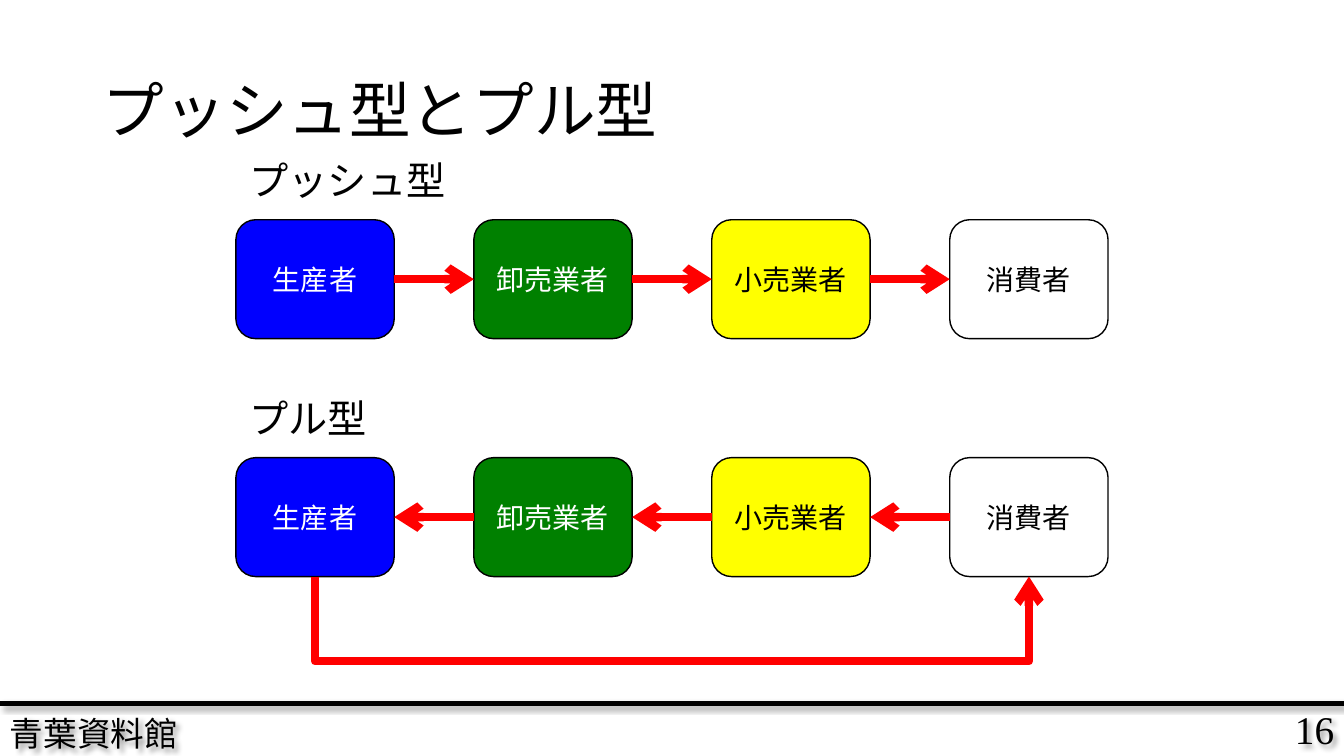
from pptx import Presentation
from pptx.dml.color import RGBColor
from pptx.enum.shapes import MSO_CONNECTOR, MSO_SHAPE
from pptx.enum.text import MSO_ANCHOR, PP_ALIGN
from pptx.oxml import parse_xml
from pptx.oxml.ns import qn
from pptx.util import Inches, Pt
from lxml.etree import SubElement

A_NS = 'xmlns:a="http://schemas.openxmlformats.org/drawingml/2006/main"'
LATIN, EAST_ASIAN = "Times New Roman", "Noto Sans CJK JP"
BLACK, WHITE, RED = "000000", "FFFFFF", "FF0000"

# Trading chain: name, fill, text colour
CHAIN = [("生産者", "0000FF", WHITE), ("卸売業者", "008000", WHITE),
         ("小売業者", "FFFF00", BLACK), ("消費者", WHITE, BLACK)]
LEFT, STEP, BOX_W, BOX_H = 2.34, 2.36, 1.57, 1.18
LABEL_H = 0.79
PUSH_TOP, PULL_TOP = 2.18, 4.54


def color(hex_string):
    return RGBColor.from_string(hex_string)


def write(shape, text, size, hex_color=BLACK, align=PP_ALIGN.LEFT, font=LATIN):
    tf = shape.text_frame
    tf.word_wrap = True
    tf.vertical_anchor = MSO_ANCHOR.MIDDLE
    p = tf.paragraphs[0]
    p.alignment = align
    r = p.add_run()
    r.text = text
    r.font.size = Pt(size)
    r.font.name = font
    r.font.color.rgb = color(hex_color)
    SubElement(r.font._element, qn("a:ea"), typeface=EAST_ASIAN)
    return p


def add_shadow(shape):
    shape._element.spPr.append(parse_xml(
        f'<a:effectLst {A_NS}><a:outerShdw blurRad="{Pt(4)}" dist="{Pt(3)}" '
        'dir="2700000" algn="tl" rotWithShape="0"><a:srgbClr val="000000">'
        '<a:alpha val="40000"/></a:srgbClr></a:outerShdw></a:effectLst>'))


def add_round_box(s, left, top, width, height, fill=None):
    sp = s.shapes.add_shape(MSO_SHAPE.ROUNDED_RECTANGLE, Inches(left),
                            Inches(top), Inches(width), Inches(height))
    sp.shadow.inherit = False
    if fill:
        sp.fill.solid()
        sp.fill.fore_color.rgb = color(fill)
        sp.line.color.rgb = color(BLACK)
        sp.line.width = Pt(1)
    else:
        sp.fill.background()
        sp.line.fill.background()
    return sp


def style_line(shape, hex_color, width, arrow_end=None):
    shape.line.color.rgb = color(hex_color)
    shape.line.width = Pt(width)
    if arrow_end:
        SubElement(shape.line._get_or_add_ln(), qn(f"a:{arrow_end}"), type="arrow")


def add_line(s, x1, y1, x2, y2, hex_color, width, arrow_end=None):
    line = s.shapes.add_connector(MSO_CONNECTOR.STRAIGHT, Inches(x1),
                                  Inches(y1), Inches(x2), Inches(y2))
    style_line(line, hex_color, width, arrow_end)
    return line


def add_chain(s, label, top, arrow_end):
    for i, (name, fill, text_color) in enumerate(CHAIN):
        box = add_round_box(s, LEFT + i * STEP, top, BOX_W, BOX_H, fill)
        write(box, name, 20, text_color, PP_ALIGN.CENTER)
    # Arrows across the gaps
    y = top + BOX_H / 2
    for i in range(len(CHAIN) - 1):
        x = LEFT + i * STEP
        arrow = add_line(s, x + BOX_W, y, x + STEP, y, RED, 6, arrow_end)
        SubElement(arrow._element.spPr, qn("a:effectLst"))
    heading = add_round_box(s, LEFT, top - LABEL_H, STEP, LABEL_H)
    write(heading, label, 28)


def add_return_path(s):
    x1 = LEFT + BOX_W / 2
    x2 = x1 + STEP * (len(CHAIN) - 1)
    top, bottom = PULL_TOP + BOX_H, 6.56
    builder = s.shapes.build_freeform(Inches(x1), Inches(top))
    builder.add_line_segments([(Inches(x), Inches(y)) for x, y in
                               [(x1, bottom), (x2, bottom), (x2, top)]], close=False)
    sp = builder.convert_to_shape()
    sp.shadow.inherit = False
    sp.fill.background()
    style_line(sp, RED, 6, "tailEnd")


def add_footer_text(s, text, left, top, width, height, size, align):
    tb = s.shapes.add_textbox(Inches(left), Inches(top), Inches(width), Inches(height))
    write(tb, text, size, align=align)
    add_shadow(tb)


def main():
    prs = Presentation()
    prs.slide_width, prs.slide_height = Inches(13.33), Inches(7.5)
    s = prs.slides.add_slide(prs.slide_layouts[5])

    # Footer
    add_footer_text(s, "16", 11.55, 6.98, 1.78, 0.51, 28, PP_ALIGN.RIGHT)
    add_footer_text(s, "青葉資料館", 0, 7.05, 3.6, 0.45, 24, PP_ALIGN.LEFT)
    add_shadow(add_line(s, 0, 6.98, 13.33, 6.98, BLACK, 3))

    # Title
    title = s.shapes.title
    title.left, title.top = Inches(0.92), Inches(0.4)
    title.width, title.height = Inches(11.5), Inches(1.45)
    write(title, "プッシュ型とプル型", 44, font=EAST_ASIAN).line_spacing = 0.9

    # Push and pull flows
    add_chain(s, "プッシュ型", PUSH_TOP, "tailEnd")
    add_chain(s, "プル型", PULL_TOP, "headEnd")
    add_return_path(s)

    prs.save("out.pptx")


if __name__ == "__main__":
    main()
